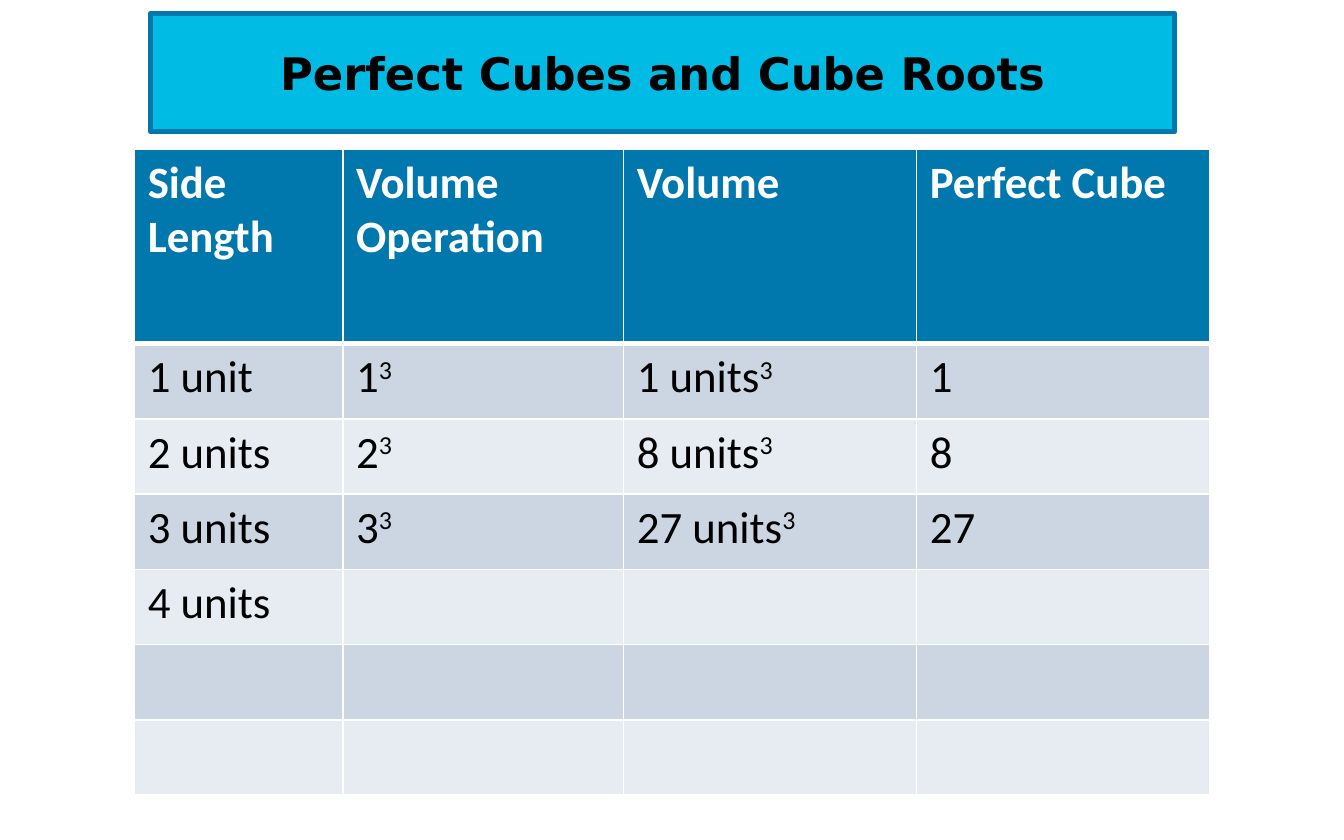
from lxml import etree
from pptx import Presentation
from pptx.dml.color import RGBColor
from pptx.enum import text
from pptx.oxml import ns
from pptx.util import Pt

COLORS = {
    "cyan": "00BCE4",
    "blue": "0078AE",
    "dark_band": "CCD6E3",
    "light_band": "E7ECF2",
    "white": "FFFFFF",
    "black": "000000",
}
HEADINGS = ["Side Length", "Volume Operation", "Volume", "Perfect Cube"]
SIDES = [1, 2, 3]
EMPTY_ROWS = 2
COLUMN_WIDTHS = [111.6, 150.4, 157, 157]
HEADER_HEIGHT = 104.4
ROW_HEIGHT = 40.32


def color(name):
    return RGBColor.from_string(COLORS[name])


def add_run(paragraph, content, font, color_name, bold=False, superscript=False):
    run = paragraph.add_run()
    run.text = content
    run.font.name = font
    run.font.size = Pt(24)
    run.font.bold = bold
    run.font.color.rgb = color(color_name)
    if superscript:
        run.font._element.set("baseline", "30000")


def format_title(slide):
    title = slide.shapes.title
    title.left, title.top = Pt(80.64), Pt(7.2)
    title.width, title.height = Pt(548.64), Pt(63.36)
    title.shadow.inherit = False
    title.fill.solid()
    title.fill.fore_color.rgb = color("cyan")
    title.line.color.rgb = color("blue")
    title.line.width = Pt(3)
    frame = title.text_frame
    frame.word_wrap = True
    frame.auto_size = text.MSO_AUTO_SIZE.NONE
    frame.vertical_anchor = text.MSO_ANCHOR.MIDDLE
    paragraph = frame.paragraphs[0]
    paragraph.alignment = text.PP_ALIGN.CENTER
    add_run(paragraph, "Perfect Cubes and Cube Roots", "DejaVu Sans", "black", bold=True)


def set_border(cell, side, width):
    properties = cell._tc.get_or_add_tcPr()
    line = etree.SubElement(properties, ns.qn(f"a:ln{side}"), w=str(Pt(width)))
    fill = etree.SubElement(line, ns.qn("a:solidFill"))
    etree.SubElement(fill, ns.qn("a:srgbClr"), val=COLORS["white"])


def format_cell(cell, row, last_header_row=0):
    for side in "LRTB":
        header_edge = (row == last_header_row and side == "B") or (
            row == last_header_row + 1 and side == "T"
        )
        set_border(cell, side, 3 if header_edge else 1)
    if row <= last_header_row:
        fill_name = "blue"
    else:
        fill_name = "dark_band" if row % 2 else "light_band"
    cell.fill.solid()
    cell.fill.fore_color.rgb = color(fill_name)


def cube_row(side):
    unit = "unit" if side == 1 else "units"
    volume = side ** 3
    return [(f"{side} {unit}", ""), (f"{side}", "3"), (f"{volume} units", "3"), (f"{volume}", "")]


def table_rows():
    blank = ("", "")
    rows = [[(heading, "") for heading in HEADINGS]]
    rows += [cube_row(side) for side in SIDES]
    rows.append([("4 units", ""), blank, blank, blank])
    rows += [[blank] * len(HEADINGS) for _ in range(EMPTY_ROWS)]
    return rows


def add_cube_table(slide):
    rows = table_rows()
    heights = [HEADER_HEIGHT] + [ROW_HEIGHT] * (len(rows) - 1)
    table = slide.shapes.add_table(
        len(rows), len(HEADINGS), Pt(72), Pt(79.7), Pt(sum(COLUMN_WIDTHS)), Pt(sum(heights))
    ).table
    for column, width in zip(table.columns, COLUMN_WIDTHS):
        column.width = Pt(width)
    for row, (contents, height) in enumerate(zip(rows, heights)):
        table.rows[row].height = Pt(height)
        for column, (base, exponent) in enumerate(contents):
            cell = table.cell(row, column)
            format_cell(cell, row)
            paragraph = cell.text_frame.paragraphs[0]
            text_color = "black" if row else "white"
            if base:
                add_run(paragraph, base, "Calibri", text_color, bold=row == 0)
            if exponent:
                add_run(paragraph, exponent, "Calibri", text_color, superscript=True)


def main():
    presentation = Presentation()
    presentation.slide_width, presentation.slide_height = Pt(720), Pt(450)
    slide = presentation.slides.add_slide(presentation.slide_layouts[5])
    format_title(slide)
    add_cube_table(slide)
    presentation.save("out.pptx")


if __name__ == "__main__":
    main()
